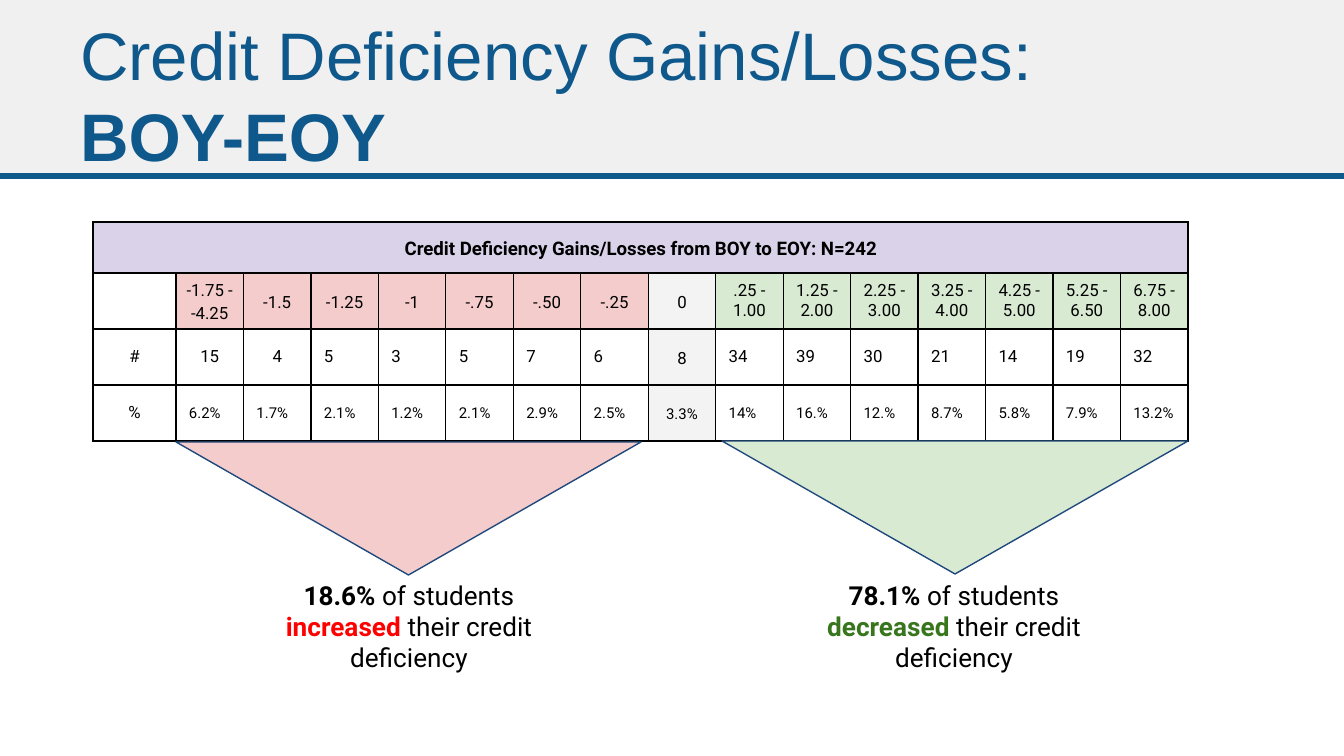
from lxml import etree
from pptx import Presentation
from pptx.dml.color import RGBColor
from pptx.enum.shapes import MSO_CONNECTOR, MSO_SHAPE
from pptx.enum.text import MSO_ANCHOR, MSO_AUTO_SIZE, PP_ALIGN
from pptx.oxml import parse_xml
from pptx.oxml.ns import nsdecls, qn
from pptx.util import Pt

LEFT, CENTER = PP_ALIGN.LEFT, PP_ALIGN.CENTER
MIDDLE, TOP = MSO_ANCHOR.MIDDLE, MSO_ANCHOR.TOP
NO_FIT = MSO_AUTO_SIZE.NONE
RECTANGLE, TRIANGLE = MSO_SHAPE.RECTANGLE, MSO_SHAPE.ISOSCELES_TRIANGLE
STRAIGHT = MSO_CONNECTOR.STRAIGHT
SIDES = ("left", "top", "right", "bottom")
SCALE = 9144000 / 1344

COLORS = {
    "band": "F0F0F0", "blue": "0F588B", "outline": "1F497D", "black": "000000",
    "lilac": "D9D2E9", "pink": "F4CCCC", "gray": "F3F3F3", "mint": "D9EAD3",
    "red": "FF0000", "green": "38761D",
}


def px(*lengths):
    return [round(length * SCALE) for length in lengths]


def write(para, spans, size, font, align=LEFT, spacing=1.0):
    para.alignment = align
    para.line_spacing = spacing
    for text, bold, color in spans:
        span = para.add_run()
        span.text = text
        for name, value in {"size": Pt(size), "name": font, "bold": bold}.items():
            setattr(span.font, name, value)
        span.font.color.rgb = RGBColor.from_string(COLORS[color])


deck = Presentation()
deck.slide_width, deck.slide_height = px(1344, 756)
page = deck.slides.add_slide(deck.slide_layouts[5])

title = page.shapes.title
band = page.shapes.add_shape(RECTANGLE, *px(0, 0, 1344, 176))
band.shadow.inherit = False
band.fill.solid()
band.fill.fore_color.rgb = RGBColor.from_string(COLORS["band"])
band.line.fill.background()
rule = page.shapes.add_connector(STRAIGHT, *px(0, 176, 1344, 176))
rule.line.width = Pt(3)
rule.line.color.rgb = RGBColor.from_string(COLORS["blue"])
etree.SubElement(rule.element.spPr, qn("a:effectLst"))
for backdrop in (band, rule):
    title.element.addprevious(backdrop.element)

title.left, title.top, title.width, title.height = px(67, 31, 1031, 126)
title_format = {"auto_size": NO_FIT, "word_wrap": True, "vertical_anchor": MIDDLE}
title_format.update({f"margin_{side}": px(13)[0] for side in SIDES})
for name, value in title_format.items():
    setattr(title.text_frame, name, value)
write(title.text_frame.paragraphs[0],
      [("Credit Deficiency Gains/Losses: ", False, "blue"), ("BOY-EOY", True, "blue")],
      36, "Arial")

rows = [
    ["Credit Deficiency Gains/Losses from BOY to EOY: N=242"] + [""] * 15,
    ["", "-1.75 - -4.25", "-1.5", "-1.25", "-1", "-.75", "-.50", "-.25", "0",
     ".25 - 1.00", "1.25 - 2.00", "2.25 - 3.00", "3.25 - 4.00", "4.25 - 5.00",
     "5.25 - 6.50", "6.75 - 8.00"],
    ["#", "15", "4", "5", "3", "5", "7", "6", "8",
     "34", "39", "30", "21", "14", "19", "32"],
    ["%", "6.2%", "1.7%", "2.1%", "1.2%", "2.1%", "2.9%", "2.5%", "3.3%",
     "14%", "16.%", "12.%", "8.7%", "5.8%", "7.9%", "13.2%"],
]
heights = [51, 56, 56, 56]
label_width, table_width, zero_column = 83, 1095, 8
header_fills = [None] + ["pink"] * 7 + ["gray"] + ["mint"] * 7

frame = page.shapes.add_table(4, 16, *px(93, 222, table_width, sum(heights)))
table = frame.table
for index, column in enumerate(table.columns):
    column.width = px((table_width - label_width) / 15 if index else label_width)[0]
for row, height in zip(table.rows, heights):
    row.height = px(height)[0]
table.cell(0, 0).merge(table.cell(0, 15))

for r, texts in enumerate(rows):
    for c, text in enumerate(texts):
        cell = table.cell(r, c)
        tight = r < 2 or c == zero_column
        centered = tight or c == 0 or (r == 2 and c < 3)
        spacing = 1.15 if tight and not (r == 1 and c > zero_column) else 1.0
        cell.vertical_anchor = MIDDLE
        margins = px(4, 3, 4, 3) if tight else px(13, 13, 13, 13)
        for side, margin in zip(SIDES, margins):
            setattr(cell, f"margin_{side}", margin)
        if r == 0:
            fill = "lilac"
        elif r == 1 or c == zero_column:
            fill = header_fills[c]
        else:
            fill = None
        if fill:
            cell.fill.solid()
            cell.fill.fore_color.rgb = RGBColor.from_string(COLORS[fill])
        else:
            cell.fill.background()
        if text:
            size = 10 if r == 0 else 8 if r == 3 and c else 9
            write(cell.text_frame.paragraphs[0], [(text, r == 0, "black")],
                  size, "Roboto", CENTER if centered else LEFT, spacing)
        properties = cell._tc.get_or_add_tcPr()
        for place, edge in enumerate("LRTB"):
            properties.insert(place, parse_xml(
                f'<a:ln{edge} {nsdecls("a")} w="9525"><a:solidFill>'
                f'<a:srgbClr val="{COLORS["black"]}"/></a:solidFill></a:ln{edge}>'))

callouts = [
    ("78.1%", "decreased", "green", "mint", (805, 566), (722, 441, 466, 133)),
    ("18.6%", "increased", "red", "pink", (260, 566), (176, 442, 465, 133)),
]
for share, verb, verb_color, fill, corner, arrow_place in callouts:
    box = page.shapes.add_textbox(*px(*corner, 298, 112))
    box_format = {"auto_size": NO_FIT, "word_wrap": True, "vertical_anchor": TOP}
    box_format.update({f"margin_{side}": px(13)[0] for side in SIDES})
    for name, value in box_format.items():
        setattr(box.text_frame, name, value)
    write(box.text_frame.paragraphs[0],
          [(share, True, "black"), (" of students ", False, "black"),
           (verb, True, verb_color), (" their credit deficiency", False, "black")],
          14, "Roboto", CENTER)

    arrow = page.shapes.add_shape(TRIANGLE, *px(*arrow_place))
    arrow.rotation = 180
    arrow.shadow.inherit = False
    arrow.fill.solid()
    arrow.fill.fore_color.rgb = RGBColor.from_string(COLORS[fill])
    arrow.line.width = Pt(0.75)
    arrow.line.color.rgb = RGBColor.from_string(COLORS["outline"])

deck.save("out.pptx")
